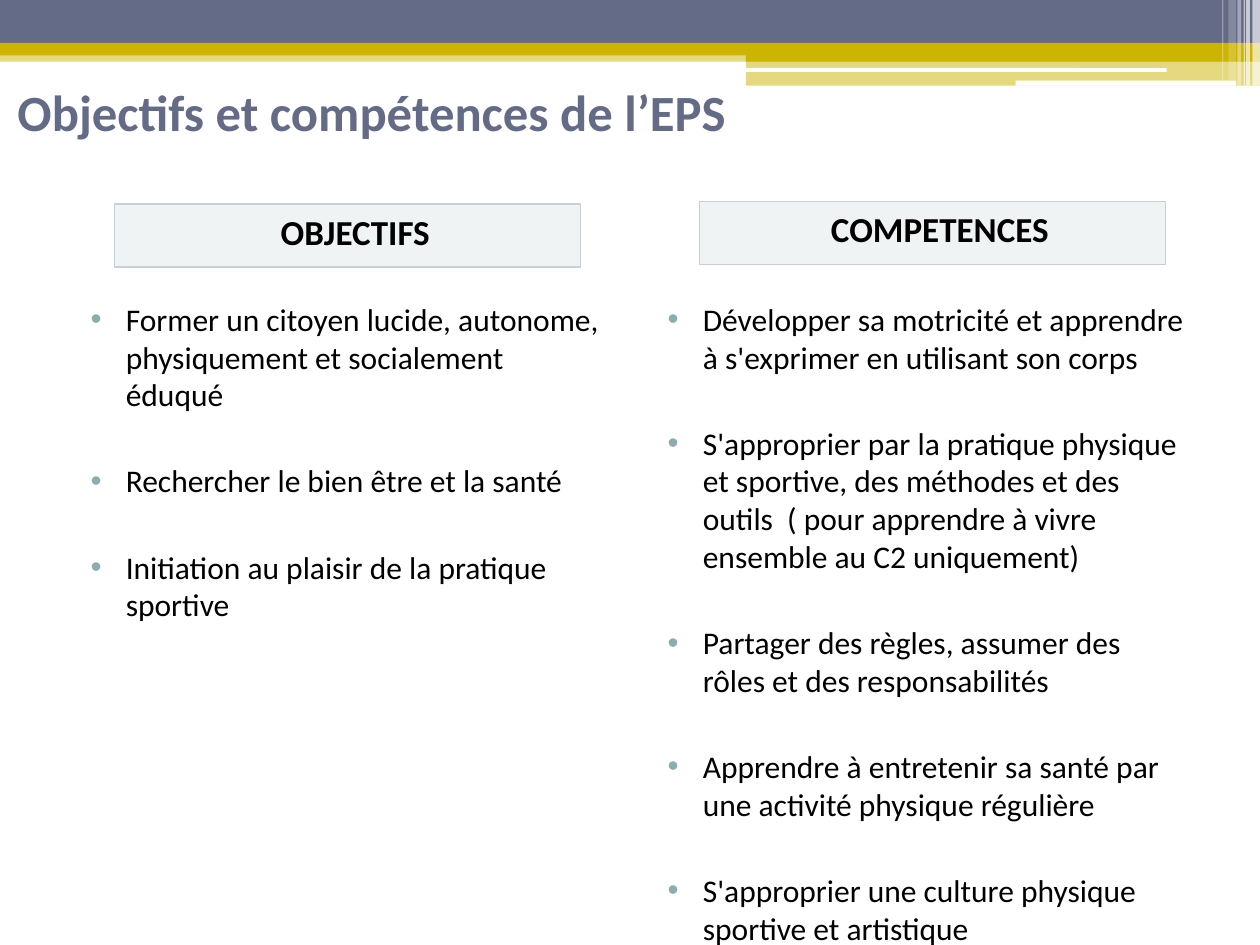
import pptx
import pptx.util
import pptx.dml.color
import pptx.enum.shapes
import pptx.enum.text
import pptx.oxml.ns
from lxml import etree

Inches, Pt = pptx.util.Inches, pptx.util.Pt
SHAPE = pptx.enum.shapes.MSO_SHAPE
ALIGN = pptx.enum.text.PP_ALIGN
ANCHOR = pptx.enum.text.MSO_ANCHOR
qn = pptx.oxml.ns.qn


def rgb(value):
    return pptx.dml.color.RGBColor.from_string(value)


class SlideBuilder:
    FONT = "Calibri"
    SLATE, GOLD, WHITE, BLACK = "646B86", "CCB400", "FFFFFF", "000000"
    PALE, BULLET = "C5D1D7", "8CADAE"

    def __init__(self, page):
        self.page = page

    def bar(self, left, top, width, height, color, opacity=100,
            kind=SHAPE.RECTANGLE, line=None):
        shape = self.page.shapes.add_shape(
            kind, Inches(left), Inches(top), Inches(width), Inches(height))
        shape.shadow.inherit = False
        shape.fill.solid()
        shape.fill.fore_color.rgb = rgb(color)
        if opacity < 100:
            fill = shape.fill._xPr.find(qn("a:solidFill"))
            etree.SubElement(fill[0], qn("a:alpha"), val=str(opacity * 1000))
        if line:
            shape.line.color.rgb = rgb(line)
            shape.line.width = Pt(0.75)
        else:
            shape.line.fill.background()
        return shape

    def text_box(self, left, top, width, height, anchor=ANCHOR.TOP):
        box = self.page.shapes.add_textbox(
            Inches(left), Inches(top), Inches(width), Inches(height))
        box.text_frame.word_wrap = True
        box.text_frame.vertical_anchor = anchor
        return box.text_frame

    def style(self, para, text, size, color=BLACK, bold=False):
        para.text = text
        para.font.name = self.FONT
        para.font.size = Pt(size)
        para.font.bold = bold
        para.font.color.rgb = rgb(color)

    def indent(self, para):
        properties = para._p.get_or_add_pPr()
        properties.set("marL", str(Inches(0.4)))
        properties.set("indent", str(Inches(-0.28)))
        return properties

    def title(self, text, *place):
        frame = self.text_box(*place, anchor=ANCHOR.MIDDLE)
        self.style(frame.paragraphs[0], text, 29, self.SLATE, True)

    def heading(self, text, *place):
        frame = self.bar(*place, self.PALE, 25, line=self.PALE).text_frame
        frame.word_wrap = True
        frame.vertical_anchor = ANCHOR.TOP
        para = frame.paragraphs[0]
        self.style(para, text, 20, bold=True)
        para.alignment = ALIGN.CENTER
        para.space_before = Pt(3)
        self.indent(para)

    def bullets(self, items, *place):
        frame = self.text_box(*place)
        for index, item in enumerate(items):
            para = frame.add_paragraph() if index else frame.paragraphs[0]
            self.style(para, item, 18)
            para.space_before = Pt(27.6 if index else 3)
            properties = self.indent(para)
            # Bullet settings come before the default run properties
            defaults = properties.find(qn("a:defRPr"))
            color = etree.Element(qn("a:buClr"))
            etree.SubElement(color, qn("a:srgbClr"), val=self.BULLET)
            font = etree.Element(qn("a:buFont"), typeface="Arial")
            mark = etree.Element(qn("a:buChar"), char="•")
            for element in (color, font, mark):
                defaults.addprevious(element)


def main():
    deck = pptx.Presentation()
    deck.slide_width, deck.slide_height = Inches(10), Inches(7.5)
    slide = SlideBuilder(deck.slides.add_slide(deck.slide_layouts[6]))

    # Header bands
    slide.bar(0, 0.4, 10, 0.09, slide.GOLD, 50)
    slide.bar(0, 0, 10, 0.34, slide.SLATE)
    slide.bar(0, 0.34, 10, 0.1, slide.GOLD)
    slide.bar(5.92, 0.39, 4.08, 0.1, slide.GOLD)
    slide.bar(5.92, 0.48, 4.08, 0.2, slide.GOLD, 50)
    for place in ((5.91, 0.54, 3.35, 0.03), (8.06, 0.64, 1.75, 0.04)):
        slide.bar(*place, slide.WHITE, kind=SHAPE.ROUNDED_RECTANGLE)

    # Translucent stripes at the right edge
    for left, width, height, opacity in (
            (9.94, 0.06, 0.68, 65), (9.89, 0.03, 0.68, 65),
            (9.87, 0.01, 0.68, 60), (9.82, 0.03, 0.68, 40),
            (9.75, 0.06, 0.64, 20), (9.7, 0.01, 0.64, 30)):
        slide.bar(left, 0, width, height, slide.WHITE, opacity)

    # Title
    slide.title("Objectifs et compétences de l’EPS", 0.04, 0.3, 5.91, 1.17)

    # Two columns
    slide.bullets((
        "Former un citoyen lucide, autonome, physiquement et socialement éduqué",
        "Rechercher le bien être et la santé",
        "Initiation au plaisir de la pratique sportive",
    ), 0.5, 2.33, 4.42, 4.95)
    slide.bullets((
        "Développer sa motricité et apprendre à s'exprimer en utilisant son corps",
        "S'approprier par la pratique physique et sportive, des méthodes et des "
        "outils  ( pour apprendre à vivre ensemble au C2 uniquement)",
        "Partager des règles, assumer des rôles et des responsabilités",
        "Apprendre à entretenir sa santé par une activité physique régulière",
        "S'approprier une culture physique sportive et artistique",
    ), 5.08, 2.33, 4.42, 5.12)

    # Column headings
    slide.heading("OBJECTIFS", 0.91, 1.62, 3.7, 0.5)
    slide.heading("COMPETENCES", 5.55, 1.6, 3.7, 0.5)

    deck.save("out.pptx")


if __name__ == "__main__":
    main()
